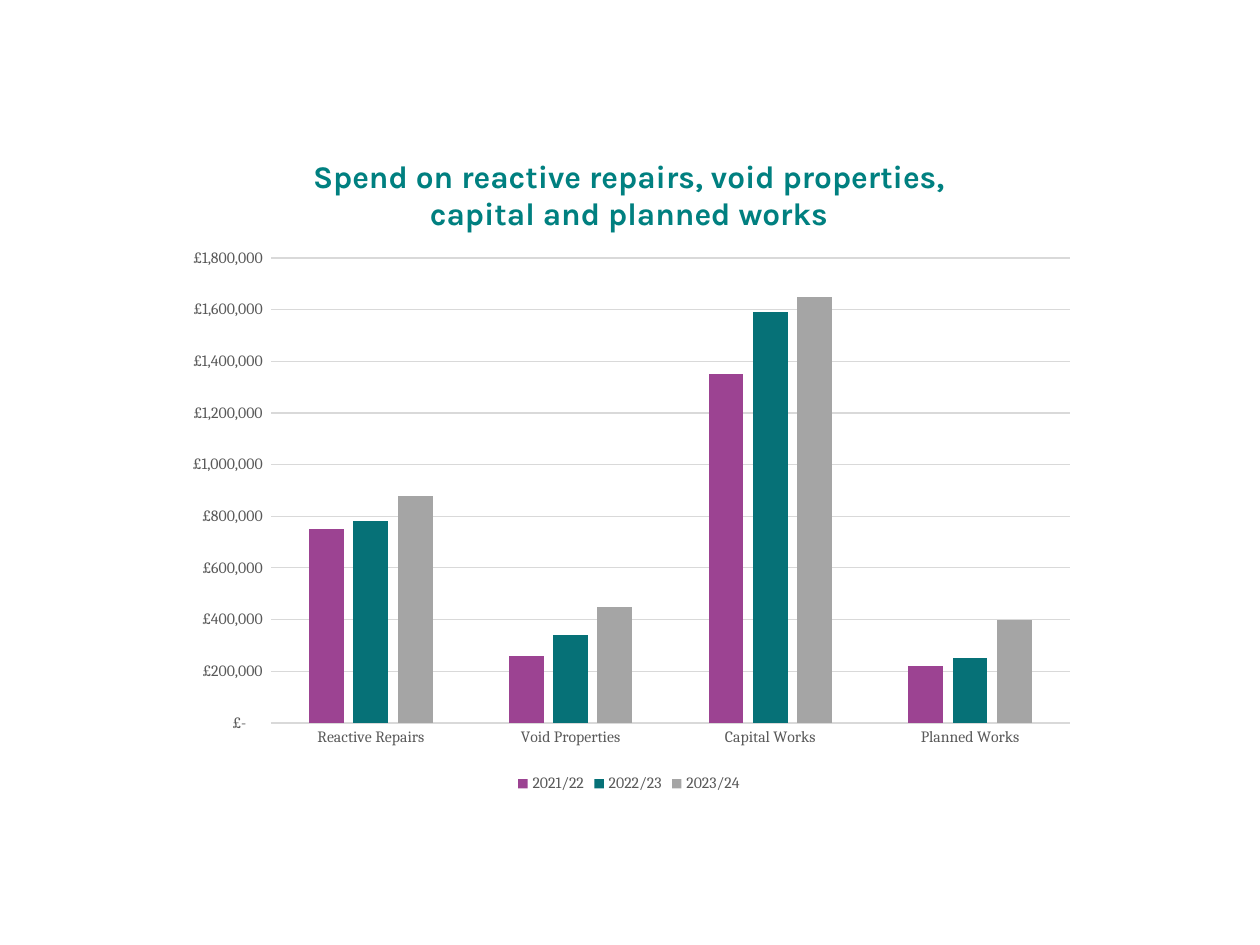
from dataclasses import dataclass

from lxml import etree
from pptx import Presentation
from pptx.chart.chart import Chart
from pptx.chart.data import CategoryChartData
from pptx.dml.color import RGBColor
from pptx.enum.chart import XL_CHART_TYPE, XL_LEGEND_POSITION, XL_TICK_MARK
from pptx.oxml.ns import qn
from pptx.text.text import Font
from pptx.util import Pt

COLUMNS = XL_CHART_TYPE.COLUMN_CLUSTERED
BOTTOM = XL_LEGEND_POSITION.BOTTOM
NO_TICK = XL_TICK_MARK.NONE
EMU_PER_PX = 914400 / 126


@dataclass(frozen=True)
class Theme:
    title_font: str = "Karla"
    body_font: str = "Cambria"
    title: str = "008080"
    text: str = "595959"
    line: str = "D9D9D9"
    title_size: int = 18
    text_size: int = 9
    line_width: float = 0.75


@dataclass(frozen=True)
class Box:
    x: int
    y: int
    w: int
    h: int


@dataclass(frozen=True)
class Year:
    name: str
    color: str
    spend: tuple[int, ...]


THEME = Theme()
CHART = Box(171, 130, 916, 668)
PLOT = Box(271, 258, 799, 465)
TITLE = "Spend on reactive repairs, void properties, capital and planned works"
POUNDS = r'_-[$£-809]* #,##0_-;\-[$£-809]* #,##0_-;_-[$£-809]* "-"??_-;_-@_-'
CATEGORIES = ("Reactive Repairs", "Void Properties", "Capital Works", "Planned Works")
YEARS = (
    Year("2021/22", "9C4392", (750000, 260000, 1350000, 220000)),
    Year("2022/23", "067177", (780000, 340000, 1590000, 250000)),
    Year("2023/24", "A5A5A5", (880000, 450000, 1650000, 400000)),
)


def px(n: int) -> int:
    return round(n * EMU_PER_PX)


def set_font(font: Font, name: str, size: int, color: str, bold: bool = False) -> None:
    font.name = name
    font.size = Pt(size)
    font.bold = bold
    font.color.rgb = RGBColor.from_string(color)


def set_line(line) -> None:
    line.color.rgb = RGBColor.from_string(THEME.line)
    line.width = Pt(THEME.line_width)


def place_plot(chart: Chart, box: Box, frame: Box) -> None:
    area = chart._chartSpace.chart.plotArea
    for old in area.findall(qn("c:layout")):
        area.remove(old)
    layout = etree.Element(qn("c:layout"))
    manual = etree.SubElement(layout, qn("c:manualLayout"))
    settings = {
        "layoutTarget": "inner",
        "xMode": "edge",
        "yMode": "edge",
        "x": round((box.x - frame.x) / frame.w, 4),
        "y": round((box.y - frame.y) / frame.h, 4),
        "w": round(box.w / frame.w, 4),
        "h": round(box.h / frame.h, 4),
    }
    for tag, value in settings.items():
        etree.SubElement(manual, qn(f"c:{tag}")).set("val", str(value))
    area.insert(0, layout)


def style_axes(chart: Chart) -> None:
    for axis in (chart.category_axis, chart.value_axis):
        axis.major_tick_mark = axis.minor_tick_mark = NO_TICK
        set_font(axis.tick_labels.font, THEME.body_font, THEME.text_size, THEME.text)
    set_line(chart.category_axis.format.line)
    values = chart.value_axis
    values.minimum_scale, values.maximum_scale, values.major_unit = 0, 1800000, 200000
    values.format.line.fill.background()
    values.has_major_gridlines = True
    set_line(values.major_gridlines.format.line)
    values.tick_labels.number_format = POUNDS
    values.tick_labels.number_format_is_linked = False


def add_spend_chart(s, box: Box) -> None:
    data = CategoryChartData(number_format=POUNDS)
    data.categories = CATEGORIES
    for year in YEARS:
        data.add_series(year.name, year.spend)
    chart = s.shapes.add_chart(
        COLUMNS, px(box.x), px(box.y), px(box.w), px(box.h), data
    ).chart
    chart.font.name = THEME.body_font
    chart.font.size = Pt(10)

    chart.has_title = True
    chart.chart_title.include_in_layout = False
    p = chart.chart_title.text_frame.paragraphs[0]
    p.text = TITLE
    set_font(p.font, THEME.title_font, THEME.title_size, THEME.title, True)

    chart.has_legend = True
    chart.legend.position = BOTTOM
    chart.legend.include_in_layout = False
    set_font(chart.legend.font, THEME.body_font, THEME.text_size, THEME.text)

    style_axes(chart)
    plot = chart.plots[0]
    plot.gap_width, plot.overlap = 219, -27
    plot.vary_by_categories = False
    for series, year in zip(plot.series, YEARS):
        series.format.fill.solid()
        series.format.fill.fore_color.rgb = RGBColor.from_string(year.color)
    place_plot(chart, PLOT, box)


def main() -> None:
    prs = Presentation()
    prs.slide_width, prs.slide_height = px(1260), px(945)
    s = prs.slides.add_slide(prs.slide_layouts[6])
    add_spend_chart(s, CHART)
    prs.save("out.pptx")


if __name__ == "__main__":
    main()
